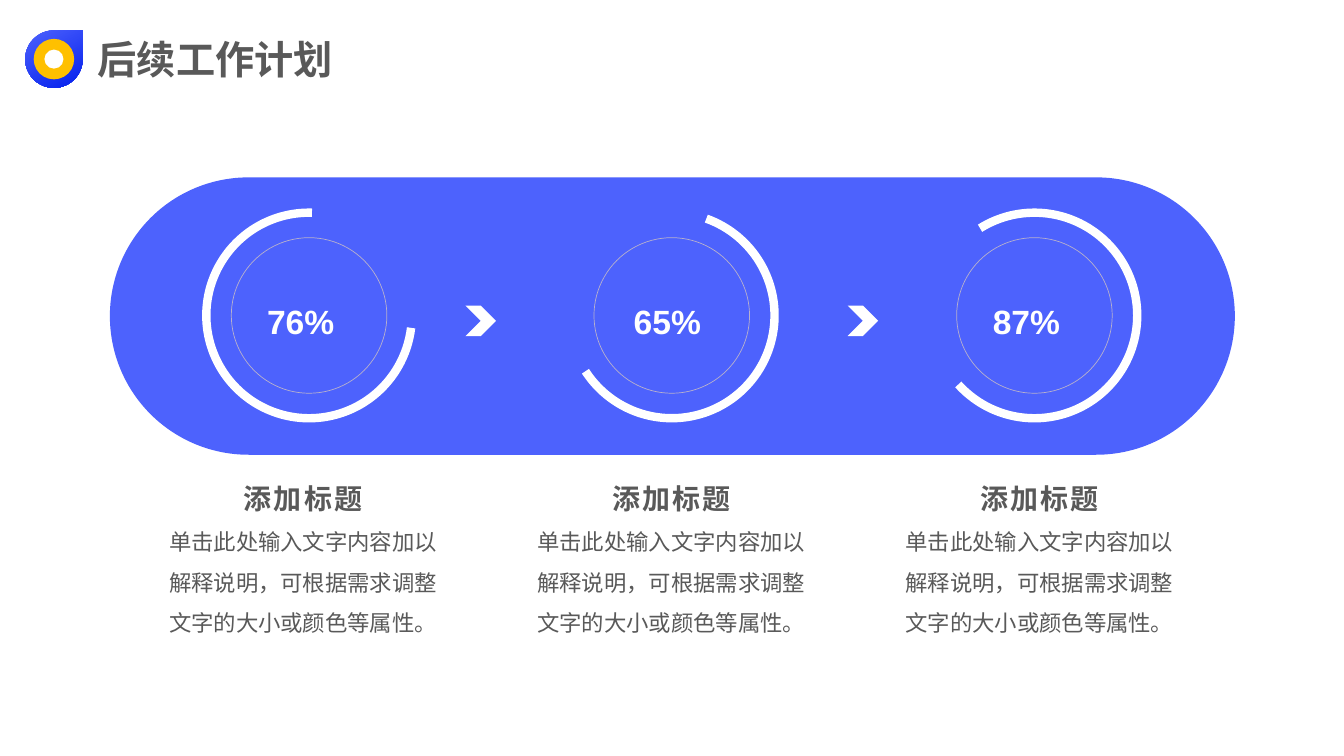
from pptx import Presentation
from pptx.dml.color import RGBColor
from pptx.enum.shapes import MSO_SHAPE
from pptx.enum.text import MSO_ANCHOR, PP_ALIGN
from pptx.oxml.ns import qn
from pptx.util import Cm, Pt
from lxml import etree

OVAL, ARC = MSO_SHAPE.OVAL, MSO_SHAPE.ARC
PILL, TEAR = MSO_SHAPE.ROUNDED_RECTANGLE, MSO_SHAPE.TEAR
CHEVRON = MSO_SHAPE.CHEVRON
LEFT, CENTER = PP_ALIGN.LEFT, PP_ALIGN.CENTER
MIDDLE = MSO_ANCHOR.MIDDLE

COLORS = {
    "blue": "4D62FD",
    "deep": "0420ED",
    "gold": "FFC000",
    "white": "FFFFFF",
    "sand": "E4D2BA",
    "gray": "595959",
}
HEAD = "添加标题"
BODY = "单击此处输入文字内容加以解释说明，可根据需求调整文字的大小或颜色等属性。"
# Percentage, arc start and end in degrees, left edge of the label in cm
STEPS = [
    ("76%", 6.93, 271.62, 6.48),
    ("65%", 289.66, 147.1, 15.72),
    ("87%", 238.05, 137.8, 24.77),
]
DIAL_X, DIAL_Y, DIAL_GAP = 7.79, 7.95, 9.14
TEXT_X, TEXT_GAP = 4.01, 9.28


def color(name):
    return RGBColor.from_string(COLORS[name])


def add_shape(slide, kind, x, y, w, h, fill=None):
    shape = slide.shapes.add_shape(kind, Cm(x), Cm(y), Cm(w), Cm(h))
    shape.shadow.inherit = False
    shape.line.fill.background()
    if fill:
        shape.fill.solid()
        shape.fill.fore_color.rgb = color(fill)
    else:
        shape.fill.background()
    return shape


def add_round(slide, kind, x, y, size, fill=None):
    """Add a shape of equal sides centred on x, y."""
    return add_shape(slide, kind, x - size / 2, y - size / 2, size, size, fill)


def set_line(shape, name, width):
    shape.line.color.rgb = color(name)
    shape.line.width = Pt(width)


def style(para, size, name, bold=True, align=LEFT):
    para.alignment = align
    for run in para.runs:
        font = run.font
        font.name = "Arial"
        font.size = Pt(size)
        font.bold = bold
        font.color.rgb = color(name)


def add_title(slide, text):
    title = slide.shapes.title
    title.left, title.top = Cm(2.21), Cm(0.76)
    title.width, title.height = Cm(6.6), Cm(1.45)
    frame = title.text_frame
    frame.text = text
    frame.vertical_anchor = MIDDLE
    style(frame.paragraphs[0], 28, "gray")


def add_badge(slide, x, y):
    fill = add_round(slide, TEAR, x, y, 1.45).fill
    fill.gradient()
    fill.gradient_angle = 300
    for stop, name in zip(fill.gradient_stops, ("blue", "deep")):
        stop.color.rgb = color(name)
    add_round(slide, OVAL, x, y, 1.02, "gold")
    add_round(slide, OVAL, x, y, 0.48, "white")


def add_dial(slide, x, text, start, end, left):
    ring = add_round(slide, OVAL, x, DIAL_Y, 3.92)
    set_line(ring, "sand", 0.5)
    tint = ring.line._ln.find(".//" + qn("a:srgbClr"))
    etree.SubElement(tint, qn("a:alpha")).set("val", "71000")

    arc = add_round(slide, ARC, x, DIAL_Y, 5.18)
    # Adjustments count in 100000ths, arc angles in 60000ths of a degree
    arc.adjustments[0] = start * 0.6
    arc.adjustments[1] = end * 0.6
    set_line(arc, "white", 6)

    box = slide.shapes.add_textbox(Cm(left), Cm(7.47), Cm(2.24), Cm(1.27))
    frame = box.text_frame
    frame.word_wrap = False
    frame.text = text
    style(frame.paragraphs[0], 24, "white")


def add_note(slide, x):
    box = slide.shapes.add_textbox(Cm(x), Cm(11.71), Cm(7.26), Cm(4.24))
    frame = box.text_frame
    frame.word_wrap = True
    frame.margin_left = frame.margin_right = 0
    frame.margin_top = frame.margin_bottom = 0
    frame.text = HEAD + "\n" + BODY
    head, body = frame.paragraphs
    style(head, 20, "gray", align=CENTER)
    style(body, 16, "gray", bold=False, align=CENTER)
    head.line_spacing = body.line_spacing = 1.5
    head.runs[0]._r.get_or_add_rPr().set("spc", "150")


def main():
    deck = Presentation()
    deck.slide_width, deck.slide_height = Cm(33.87), Cm(19.05)
    slide = deck.slides.add_slide(deck.slide_layouts[5])

    add_title(slide, "后续工作计划")
    add_badge(slide, 1.36, 1.49)
    band = add_shape(slide, PILL, 2.77, 4.47, 28.35, 6.99, "blue")
    band.adjustments[0] = 0.5

    for i, step in enumerate(STEPS):
        add_dial(slide, DIAL_X + i * DIAL_GAP, *step)
        add_note(slide, TEXT_X + i * TEXT_GAP)
    for x in (11.73, 21.36):
        add_shape(slide, CHEVRON, x, 7.7, 0.77, 0.77, "white")

    deck.save("out.pptx")


if __name__ == "__main__":
    main()
